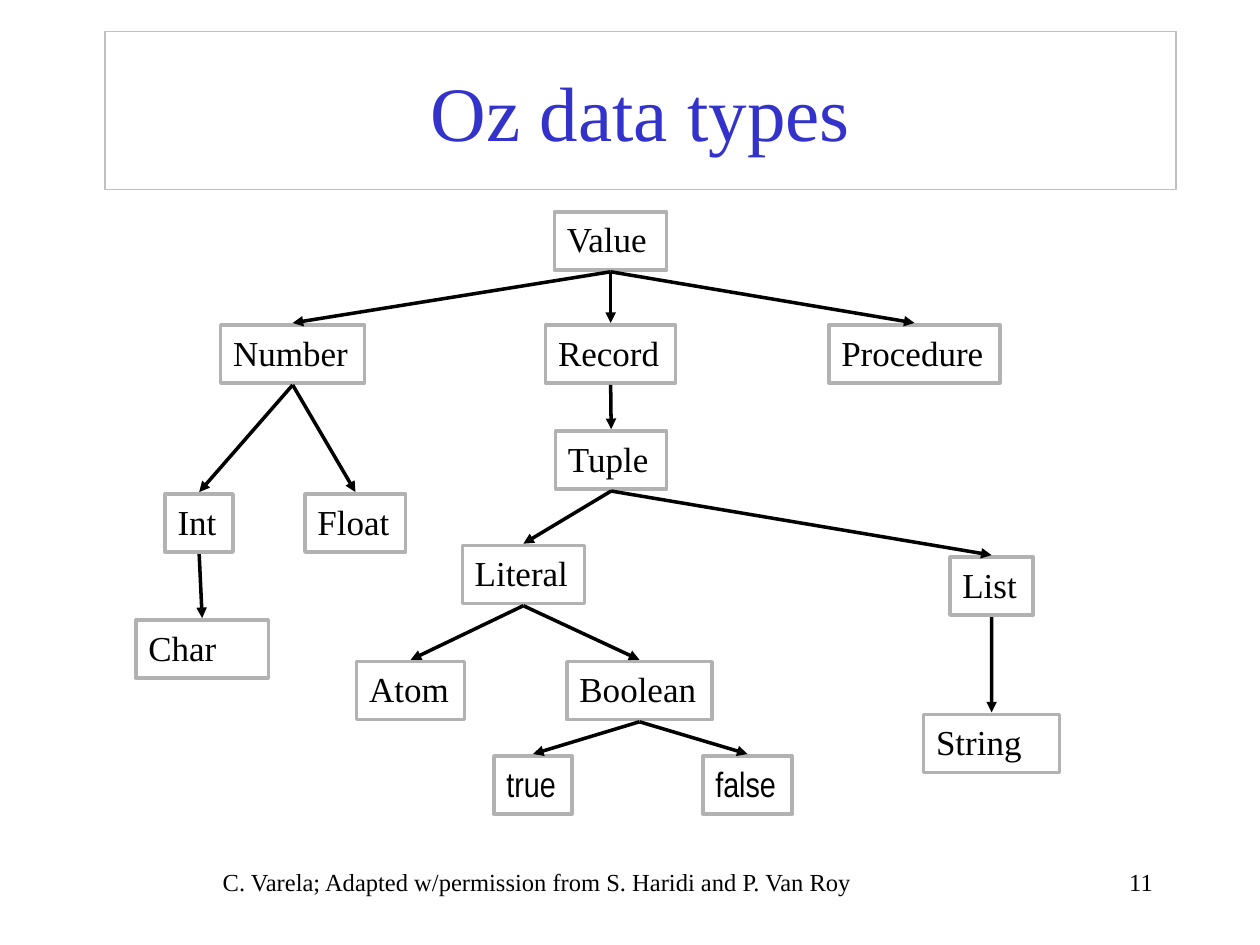
import pptx
import pptx.util
import pptx.dml.color
import pptx.enum.shapes
import pptx.enum.text
import pptx.oxml
import pptx.oxml.ns

Cm, Pt = pptx.util.Cm, pptx.util.Pt
ALIGN = pptx.enum.text.PP_ALIGN
ANCHOR = pptx.enum.text.MSO_ANCHOR
SIZING = pptx.enum.text.MSO_AUTO_SIZE

SERIF, NARROW = "Times New Roman", "Arial Narrow"
NODE_HEIGHT, ARROW_GAP = 1.17, 0.04

TITLE = "Oz data types"
FOOTERS = [
    ("C. Varela; Adapted w/permission from S. Haridi and P. Van Roy",
     (4.24, 17.35, 16.94, 1.27), ALIGN.LEFT),
    ("11", (18.21, 17.35, 5.28, 1.27), ALIGN.RIGHT),
]
NODES = {
    "Value": (11.18, 4.27, 2.26),
    "Number": (4.45, 6.55, 2.9),
    "Record": (11, 6.55, 2.62),
    "Procedure": (16.71, 6.55, 3.45),
    "Int": (3.33, 9.96, 1.37),
    "Float": (6.15, 9.96, 2.03),
    "Char": (2.74, 12.5, 2.67),
    "Tuple": (11.2, 8.69, 2.24),
    "Literal": (9.32, 11, 2.46),
    "List": (19.15, 11.23, 1.68),
    "String": (18.62, 14.4, 2.74),
    "Atom": (7.19, 13.34, 2.18),
    "Boolean": (11.43, 13.34, 2.92),
    "true": (9.96, 15.24, 1.57),
    "false": (14.17, 15.24, 1.8),
}
CHILDREN = {
    "Value": ["Number", "Record", "Procedure"],
    "Number": ["Int", "Float"],
    "Int": ["Char"],
    "Record": ["Tuple"],
    "Tuple": ["Literal", "List"],
    "Literal": ["Atom", "Boolean"],
    "Boolean": ["true", "false"],
    "List": ["String"],
}
WRAPPED = {"Char", "String"}
LITERALS = {"true", "false"}


def color(value):
    return pptx.dml.color.RGBColor.from_string(value)


def apply(target, values):
    for name, value in values.items():
        setattr(target, name, value)


def write(box, text, size, align=ALIGN.LEFT, font=SERIF, ink="000000", **frame):
    apply(box.text_frame, {"word_wrap": True, "vertical_anchor": ANCHOR.TOP, **frame})
    para = box.text_frame.paragraphs[0]
    para.alignment = align
    span = para.add_run()
    span.text = text
    apply(span.font, {"size": Pt(size), "name": font})
    span.font.color.rgb = color(ink)


def add_frame(page, place, ink, weight):
    box = page.shapes.add_shape(
        pptx.enum.shapes.MSO_SHAPE.RECTANGLE, *map(Cm, place))
    box.shadow.inherit = False
    box.fill.background()
    box.line.color.rgb = color(ink)
    box.line.width = Pt(weight)
    return box


def add_arrow(page, parent, child):
    left, top, width = NODES[parent]
    child_left, child_top, child_width = NODES[child]
    ends = (left + width / 2, top + NODE_HEIGHT + ARROW_GAP,
            child_left + child_width / 2, child_top - ARROW_GAP)
    arrow = page.shapes.add_connector(
        pptx.enum.shapes.MSO_CONNECTOR.STRAIGHT, *map(Cm, ends))
    arrow.line.color.rgb = color("000000")
    arrow.line.width = Pt(2)
    head = pptx.oxml.parse_xml(
        f'<a:tailEnd {pptx.oxml.ns.nsdecls("a")} type="triangle"/>')
    arrow.line._get_or_add_ln().append(head)
    effects = pptx.oxml.parse_xml(f'<a:effectLst {pptx.oxml.ns.nsdecls("a")}/>')
    arrow._element.spPr.append(effects)


def main():
    deck = pptx.Presentation()
    apply(deck, {"slide_width": Cm(25.4), "slide_height": Cm(19.05)})
    page = deck.slides.add_slide(deck.slide_layouts[6])

    for text, place, align in FOOTERS:
        write(page.shapes.add_textbox(*map(Cm, place)), text, 14, align)

    title = add_frame(page, (2.12, 0.64, 21.59, 3.18), "C0C0C0", 0.75)
    write(title, TITLE, 44, ALIGN.CENTER, ink="3333CC", vertical_anchor=ANCHOR.MIDDLE)

    for name, (left, top, width) in NODES.items():
        box = add_frame(page, (left, top, width, NODE_HEIGHT), "B2B2B2", 2)
        write(box, name, 20, font=NARROW if name in LITERALS else SERIF,
              word_wrap=name in WRAPPED, auto_size=SIZING.SHAPE_TO_FIT_TEXT)

    for parent, children in CHILDREN.items():
        for child in children:
            add_arrow(page, parent, child)

    deck.save("out.pptx")


if __name__ == "__main__":
    main()
